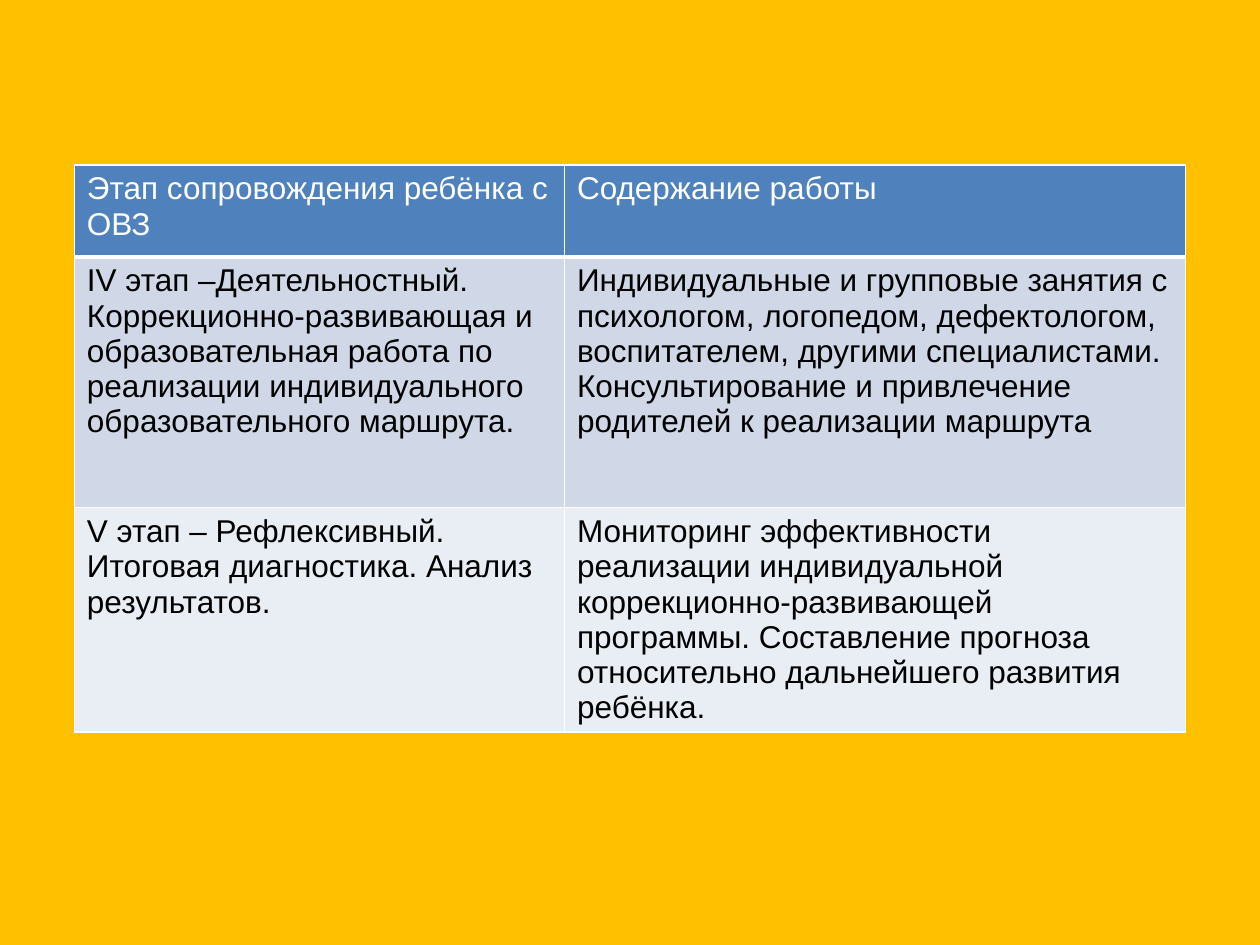
from dataclasses import dataclass

from lxml import etree
from pptx import Presentation
from pptx.dml.color import RGBColor
from pptx.oxml.ns import qn
from pptx.table import Table, _Cell
from pptx.util import Inches, Pt

WHITE = RGBColor(0xFF, 0xFF, 0xFF)
BLACK = RGBColor(0x00, 0x00, 0x00)
AMBER = RGBColor(0xFF, 0xC0, 0x00)
HEADER_BLUE = RGBColor(0x4F, 0x81, 0xBD)
BAND_DARK = RGBColor(0xD0, 0xD8, 0xE8)
BAND_LIGHT = RGBColor(0xE9, 0xED, 0xF4)

FONT = "Arial"
TEXT_SIZE = Pt(18)
LEFT, TOP = 0.59, 1.31
COLUMN_WIDTHS = (3.89, 4.93)


@dataclass(frozen=True)
class StageRow:
    stage: str
    content: str
    height: float
    fill: RGBColor
    color: RGBColor = BLACK
    bottom_border: float = 1


ROWS = (
    StageRow(
        "Этап сопровождения ребёнка с ОВЗ",
        "Содержание работы",
        0.73, HEADER_BLUE, WHITE, 3,
    ),
    StageRow(
        "IV этап –Деятельностный. Коррекционно-развивающая и образовательная "
        "работа по реализации индивидуального образовательного маршрута.",
        "Индивидуальные и групповые занятия с психологом, логопедом, "
        "дефектологом, воспитателем, другими специалистами. "
        "Консультирование и привлечение родителей к реализации маршрута",
        1.99, BAND_DARK,
    ),
    StageRow(
        "V этап – Рефлексивный. Итоговая диагностика. Анализ результатов.",
        "Мониторинг эффективности реализации индивидуальной "
        "коррекционно-развивающей программы. Составление прогноза "
        "относительно дальнейшего развития ребёнка.",
        1.68, BAND_LIGHT,
    ),
)


def set_borders(cell: _Cell, bottom: float) -> None:
    tc_pr = cell._tc.get_or_add_tcPr()
    for tag, width in (("lnL", 1), ("lnR", 1), ("lnT", 1), ("lnB", bottom)):
        ln = etree.SubElement(tc_pr, qn(f"a:{tag}"), w=str(Pt(width)))
        fill = etree.SubElement(ln, qn("a:solidFill"))
        etree.SubElement(fill, qn("a:srgbClr"), val=str(WHITE))


def fill_cell(cell: _Cell, text: str, row: StageRow) -> None:
    set_borders(cell, row.bottom_border)
    cell.fill.solid()
    cell.fill.fore_color.rgb = row.fill
    cell.text_frame.text = text
    font = cell.text_frame.paragraphs[0].runs[0].font
    font.name = FONT
    font.size = TEXT_SIZE
    font.bold = False
    font.color.rgb = row.color


def fill_table(table: Table) -> None:
    for column, width in zip(table.columns, COLUMN_WIDTHS):
        column.width = Inches(width)
    for i, row in enumerate(ROWS):
        table.rows[i].height = Inches(row.height)
        for j, text in enumerate((row.stage, row.content)):
            fill_cell(table.cell(i, j), text, row)


def main() -> None:
    prs = Presentation()
    prs.slide_width, prs.slide_height = Inches(10), Inches(7.5)
    s = prs.slides.add_slide(prs.slide_layouts[6])
    s.background.fill.solid()
    s.background.fill.fore_color.rgb = AMBER
    frame = s.shapes.add_table(
        len(ROWS), len(COLUMN_WIDTHS), Inches(LEFT), Inches(TOP),
        Inches(sum(COLUMN_WIDTHS)), Inches(sum(row.height for row in ROWS)),
    )
    fill_table(frame.table)
    prs.save("out.pptx")


if __name__ == "__main__":
    main()
